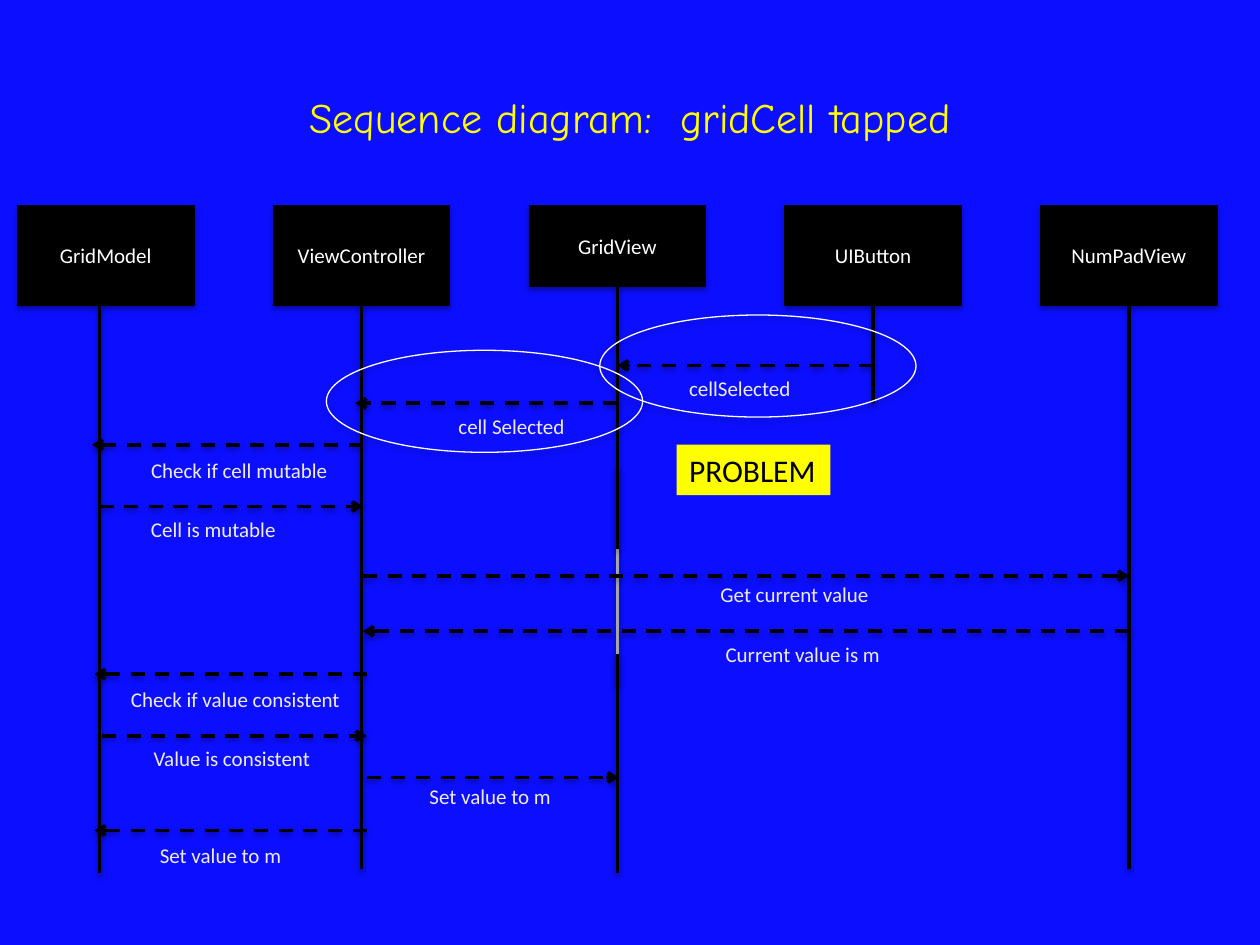
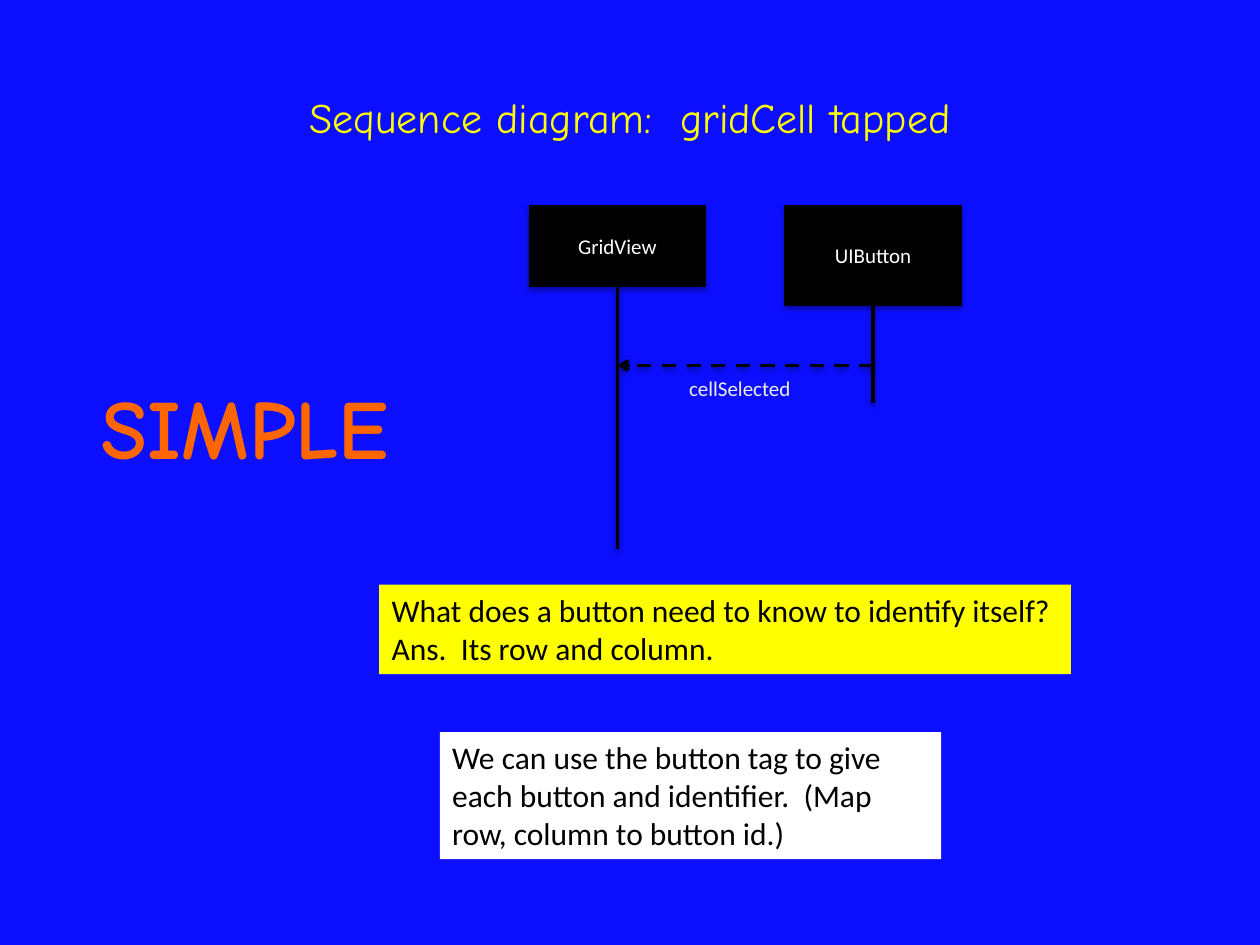
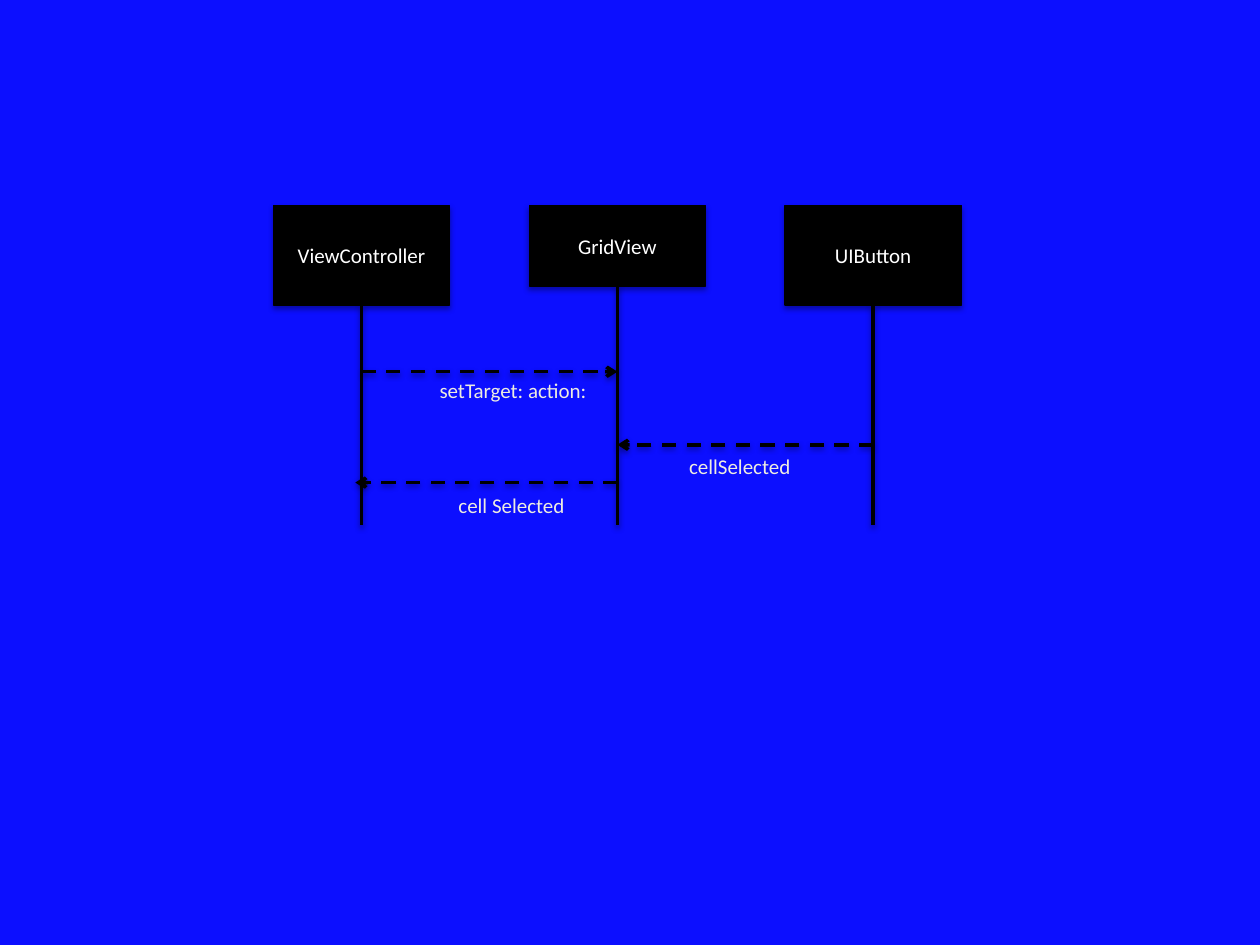
from lxml.etree import SubElement
from pptx import Presentation
from pptx.dml.color import RGBColor
from pptx.enum.dml import MSO_LINE
from pptx.enum.shapes import MSO_CONNECTOR as CONNECTOR, MSO_SHAPE as SHAPE
from pptx.enum.text import MSO_ANCHOR as ANCHOR, MSO_AUTO_SIZE as FIT, PP_ALIGN as ALIGN
from pptx.oxml.ns import qn
from pptx.util import Pt

PX = 9144  # EMU in one px, 100 px to the inch
COLORS = {
    "page": "0C0FFF", "ink": "000000", "white": "FFFFFF", "label": "EEECE1",
    "yellow": "FFFF00", "orange": "FF6600", "faded": "A6A6A6",
}
FONTS = {
    "title": {"name": "Comic Neue", "size": Pt(24)},
    "shout": {"name": "Comic Neue", "size": Pt(48), "bold": True},
    "small": {"name": "Calibri", "size": Pt(12)},
    "note": {"name": "Calibri", "size": Pt(18)},
}
SHAPE_SHADOW = {"blurRad": 40000, "dist": 23000, "alpha": 35000}
LINE_SHADOW = {"blurRad": 40000, "dist": 20000, "alpha": 38000}

TITLE = "Sequence diagram:  gridCell tapped"
HEAD_TOP, HEAD_WIDTH = 163, 140
# name: head left, head height, lifeline x
ACTORS = {
    "GridModel": (14, 79, 79),
    "ViewController": (217, 79, 287),
    "GridView": (420, 64, 490),
    "UIButton": (623, 79, 693),
    "NumPadView": (826, 79, 896),
}
TAP_MESSAGE = (693, 490, 290, "cellSelected", 537, 293)
# from x, to x, y, label, label left, label top
TAPPED_MESSAGES = [
    TAP_MESSAGE,
    (490, 282, 320, "cell Selected", 354, 323),
    (288, 73, 353, "Check if cell mutable", 110, 358),
    (79, 288, 402, "Cell is mutable", 110, 405),
    (288, 896, 457, "Get current value", 562, 457),
    (896, 288, 501, "Current value is m", 566, 504),
    (291, 75, 535, "Check if value consistent", 94, 540),
    (81, 291, 584, "Value is consistent", 112, 587),
    (291, 491, 617, "Set value to m", 331, 617),
    (291, 75, 659, "Set value to m", 117, 664),
]
TARGET_MESSAGES = [
    (287, 490, 295, "setTarget: action:", 339, 295),
    (693, 490, 353, "cellSelected", 537, 355),
    (490, 282, 383, "cell Selected", 354, 386),
]
LABEL_WIDTHS = {
    "cellSelected": 102, "cell Selected": 106, "Check if cell mutable": 162,
    "Cell is mutable": 120, "Get current value": 140, "Current value is m": 145,
    "Check if value consistent": 189, "Value is consistent": 148,
    "Set value to m": 118, "setTarget: action:": 140,
}


def emu(*lengths):
    return [length * PX for length in lengths]


def rgb(color):
    return RGBColor.from_string(COLORS[color])


def add_shadow(shape, shadow):
    """Give a shape or connector a soft shadow straight below it."""
    properties = shape.element.spPr
    effects = properties.find(qn("a:effectLst"))
    if effects is None:
        effects = SubElement(properties, qn("a:effectLst"))
    outer = SubElement(effects, qn("a:outerShdw"), dir="5400000", rotWithShape="0",
                       blurRad=str(shadow["blurRad"]), dist=str(shadow["dist"]))
    color = SubElement(outer, qn("a:srgbClr"), val=COLORS["ink"])
    SubElement(color, qn("a:alpha"), val=str(shadow["alpha"]))


def write(frame, text, font, color, align=ALIGN.LEFT):
    for index, words in enumerate(text.split("\n")):
        para = frame.add_paragraph() if index else frame.paragraphs[0]
        para.alignment = align
        span = para.add_run()
        span.text = words
        for key, value in FONTS[font].items():
            setattr(span.font, key, value)
        span.font.color.rgb = rgb(color)


def add_line(shapes, start, end, color="ink"):
    line = shapes.add_connector(CONNECTOR.STRAIGHT, *emu(*start, *end))
    line.line.width = Pt(2)
    line.line.color.rgb = rgb(color)
    return line


def add_solid_line(shapes, x, top, bottom, color="ink"):
    add_shadow(add_line(shapes, (x, top), (x, bottom), color), LINE_SHADOW)


def add_outlined(shapes, kind, box, line_color):
    shape = shapes.add_shape(kind, *emu(*box))
    shape.fill.background()
    shape.line.width = Pt(0.75)
    shape.line.color.rgb = rgb(line_color)
    shape.shadow.inherit = False
    add_shadow(shape, SHAPE_SHADOW)
    return shape


def add_text(page, box, text, font, color, fill=None, wrap=False):
    text_box = page.shapes.add_textbox(*emu(*box))
    if fill:
        text_box.fill.solid()
        text_box.fill.fore_color.rgb = rgb(fill)
    frame = text_box.text_frame
    frame.word_wrap = wrap
    frame.auto_size = FIT.SHAPE_TO_FIT_TEXT
    write(frame, text, font, color)


def add_title(page):
    frame = page.shapes.add_textbox(*emu(50, 30, 900, 125)).text_frame
    frame.word_wrap = True
    frame.vertical_anchor = ANCHOR.MIDDLE
    write(frame, TITLE, "title", "yellow", ALIGN.CENTER)


def add_actor(page, name, bottom):
    """Group an actor's head with its lifeline, which ends at bottom."""
    left, height, x = ACTORS[name]
    group = page.shapes.add_group_shape()
    head = add_outlined(group.shapes, SHAPE.RECTANGLE,
                        (left, HEAD_TOP, HEAD_WIDTH, height), "ink")
    head.fill.solid()
    head.fill.fore_color.rgb = rgb("ink")
    head.text_frame.vertical_anchor = ANCHOR.MIDDLE
    write(head.text_frame, name, "small", "white", ALIGN.CENTER)
    add_solid_line(group.shapes, x, HEAD_TOP + height, bottom)


def add_message(page, start, end, y, text, left, top):
    arrow = add_line(page.shapes, (start, y), (end, y))
    arrow.line.dash_style = MSO_LINE.DASH
    SubElement(arrow.element.spPr.find(qn("a:ln")), qn("a:tailEnd"), type="arrow")
    add_shadow(arrow, LINE_SHADOW)
    add_text(page, (left, top, LABEL_WIDTHS[text], 30), text, "small", "label")


def add_sequence(page, lifeline_ends, messages):
    for name, bottom in lifeline_ends.items():
        add_actor(page, name, bottom)
    for message in messages:
        add_message(page, *message)


def add_page(deck):
    page = deck.slides.add_slide(deck.slide_layouts[6])
    page.background.fill.solid()
    page.background.fill.fore_color.rgb = rgb("page")
    return page


def build_tapped(page):
    add_solid_line(page.shapes, 490, 370, 544, "faded")
    add_title(page)
    add_solid_line(page.shapes, 490, 519, 693)
    ends = {"GridModel": 693, "ViewController": 690, "GridView": 436,
            "UIButton": 320, "NumPadView": 690}
    add_sequence(page, ends, TAPPED_MESSAGES)
    add_text(page, (537, 353, 122, 40), "PROBLEM", "note", "ink", "yellow")
    for left, top in ((259, 278), (476, 250)):
        add_outlined(page.shapes, SHAPE.OVAL, (left, top, 251, 81), "white")


def build_simple(page):
    add_title(page)
    add_sequence(page, {"UIButton": 320, "GridView": 436}, [TAP_MESSAGE])
    add_text(page, (301, 464, 549, 71),
             "What does a button need to know to identify itself?\n"
             "Ans.  Its row and column.", "note", "ink", "yellow")
    add_text(page, (71, 293, 277, 91), "SIMPLE", "shout", "orange")
    add_text(page, (349, 581, 398, 101),
             "We can use the button tag to give each button and identifier.  "
             "(Map row, column to button id.)", "note", "ink", "white", wrap=True)


def build_target(page):
    names = ("UIButton", "GridView", "ViewController")
    add_sequence(page, dict.fromkeys(names, 417), TARGET_MESSAGES)


def main():
    deck = Presentation()
    deck.slide_width, deck.slide_height = emu(1000, 750)
    for build in (build_tapped, build_simple, build_target):
        build(add_page(deck))
    deck.save("out.pptx")


if __name__ == "__main__":
    main()
